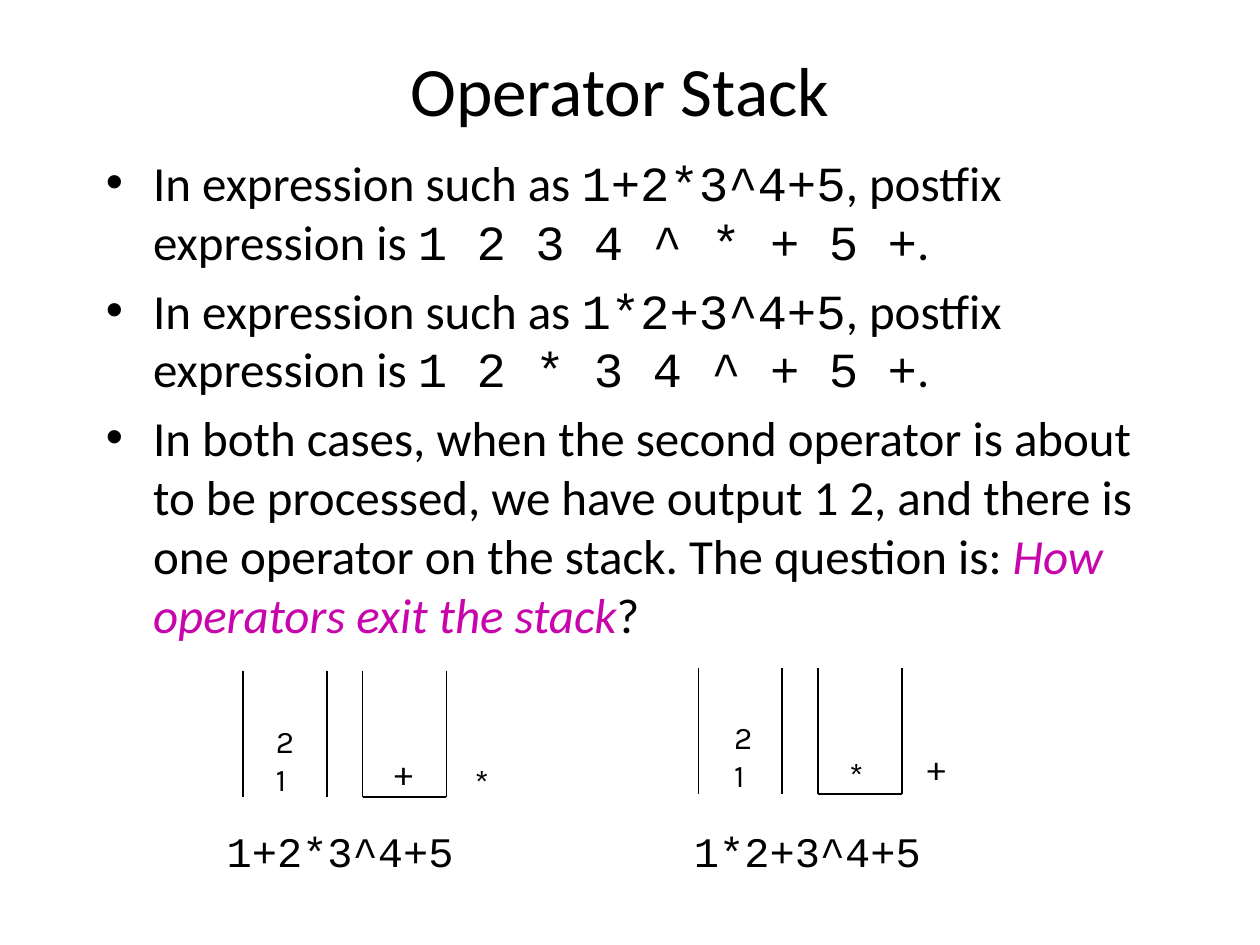
"""Build the Operator Stack slide: postfix examples above two stack diagrams."""
from lxml import etree
from pptx import Presentation
from pptx.dml.color import RGBColor
from pptx.enum.shapes import MSO_CONNECTOR
from pptx.enum.text import MSO_ANCHOR, MSO_AUTO_SIZE, PP_ALIGN
from pptx.oxml.ns import qn
from pptx.util import Cm, Pt

STRAIGHT = MSO_CONNECTOR.STRAIGHT
NO_FIT, GROW = MSO_AUTO_SIZE.NONE, MSO_AUTO_SIZE.SHAPE_TO_FIT_TEXT
MIDDLE, CENTER = MSO_ANCHOR.MIDDLE, PP_ALIGN.CENTER

COLORS = {"ink": "000000", "question": "C804AC"}
PROSE, CODE, LABEL = "Calibri", "Courier New", "Karla"

TITLE = "Operator Stack"
BULLETS = [
    [("In expression such as ", "prose"), ("1+2*3^4+5", "code"),
     (", postfix expression is ", "prose"), ("1 2 3 4 ^ * + 5 +", "code"), (".", "prose")],
    [("In expression such as ", "prose"), ("1*2+3^4+5", "code"),
     (", postfix expression is ", "prose"), ("1 2 * 3 4 ^ + 5 +", "code"), (".", "prose")],
    [("In both cases, when the second operator is about to be processed, we have "
      "output 1 2, and there is one operator on the stack. The question is: ", "prose"),
     ("How operators exit the stack", "question"), ("?", "prose")],
]
OPERANDS = ["2", "1"]
DIAGRAMS = [
    {"left": 4.9, "top": 13.52, "expression": ("1+2*3^4+5", 4.32),
     "operands": (5.31, 14.43), "stacked": ("+", 7.7, 15.01), "next": ("*", 9.32, 15.21)},
    {"left": 14.08, "top": 13.46, "expression": ("1*2+3^4+5", 13.74),
     "operands": (14.55, 14.35), "stacked": ("*", 16.87, 15.06), "next": ("+", 18.44, 14.91)},
]
COLUMN_WIDTH, COLUMN_HEIGHT, STACK_OFFSET = 1.69, 2.54, 2.41
EXPRESSION_TOP = 16.51
OPERATOR_WIDTHS = {"+": 1.02, "*": 0.89}


def color(name):
    return RGBColor.from_string(COLORS[name])


def style(font, size, face):
    font.size, font.name = Pt(size), face
    font.color.rgb = color("ink")


def place(shape, left, top, width, height):
    shape.left, shape.top, shape.width, shape.height = map(Cm, (left, top, width, height))


def add_line(shapes, x1, y1, x2, y2):
    line = shapes.add_connector(STRAIGHT, Cm(x1), Cm(y1), Cm(x2), Cm(y2))
    line.line.color.rgb = color("ink")
    line.line.width = Pt(1)
    etree.SubElement(line._element.spPr, qn("a:effectLst"))


def add_label(shapes, lines, left, top, width, height, size, face):
    frame = shapes.add_textbox(Cm(left), Cm(top), Cm(width), Cm(height)).text_frame
    frame.word_wrap, frame.auto_size = False, GROW
    frame.text = "\n".join(lines)
    for paragraph in frame.paragraphs:
        style(paragraph.font, size, face)


def add_heading(title):
    place(title, 1.7, 0.84, 21.59, 1.9)
    frame = title.text_frame
    frame.text = TITLE
    frame.auto_size, frame.vertical_anchor = NO_FIT, MIDDLE
    frame.paragraphs[0].alignment = CENTER
    style(frame.paragraphs[0].font, 39.6, PROSE)


def add_bullets(body):
    place(body, 1.88, 2.95, 21.59, 11.43)
    frame = body.text_frame
    frame.auto_size = NO_FIT
    for index, pieces in enumerate(BULLETS):
        paragraph = frame.add_paragraph() if index else frame.paragraphs[0]
        style(paragraph.font, 28, PROSE)
        for text, role in pieces:
            run = paragraph.add_run()
            run.text = text
            style(run.font, 28, CODE if role == "code" else PROSE)
            if role == "question":
                run.font.italic = True
                run.font.color.rgb = color("question")


def add_diagram(shapes, diagram):
    left, top = diagram["left"], diagram["top"]
    bottom = top + COLUMN_HEIGHT
    stack_left = left + STACK_OFFSET
    stack_right = stack_left + COLUMN_WIDTH
    for x in (left, left + COLUMN_WIDTH):
        add_line(shapes, x, top, x, bottom)
    stack = shapes.add_group_shape().shapes
    for x in (stack_left, stack_right):
        add_line(stack, x, top, x, bottom)
    add_line(stack, stack_left, bottom, stack_right, bottom)

    expression, expression_left = diagram["expression"]
    add_label(shapes, [expression], expression_left, EXPRESSION_TOP, 5.08, 1.27, 24, CODE)
    add_label(shapes, OPERANDS, *diagram["operands"], 0.86, 1.78, 18, LABEL)
    for operator, x, y in (diagram["stacked"], diagram["next"]):
        add_label(shapes, [operator], x, y, OPERATOR_WIDTHS[operator], 1.09, 20, LABEL)


def main():
    deck = Presentation()
    deck.slide_width, deck.slide_height = Cm(25.4), Cm(19.05)
    slide = deck.slides.add_slide(deck.slide_layouts[1])
    add_heading(slide.shapes.title)
    add_bullets(slide.placeholders[1])
    for diagram in DIAGRAMS:
        add_diagram(slide.shapes, diagram)
    deck.save("out.pptx")


if __name__ == "__main__":
    main()
